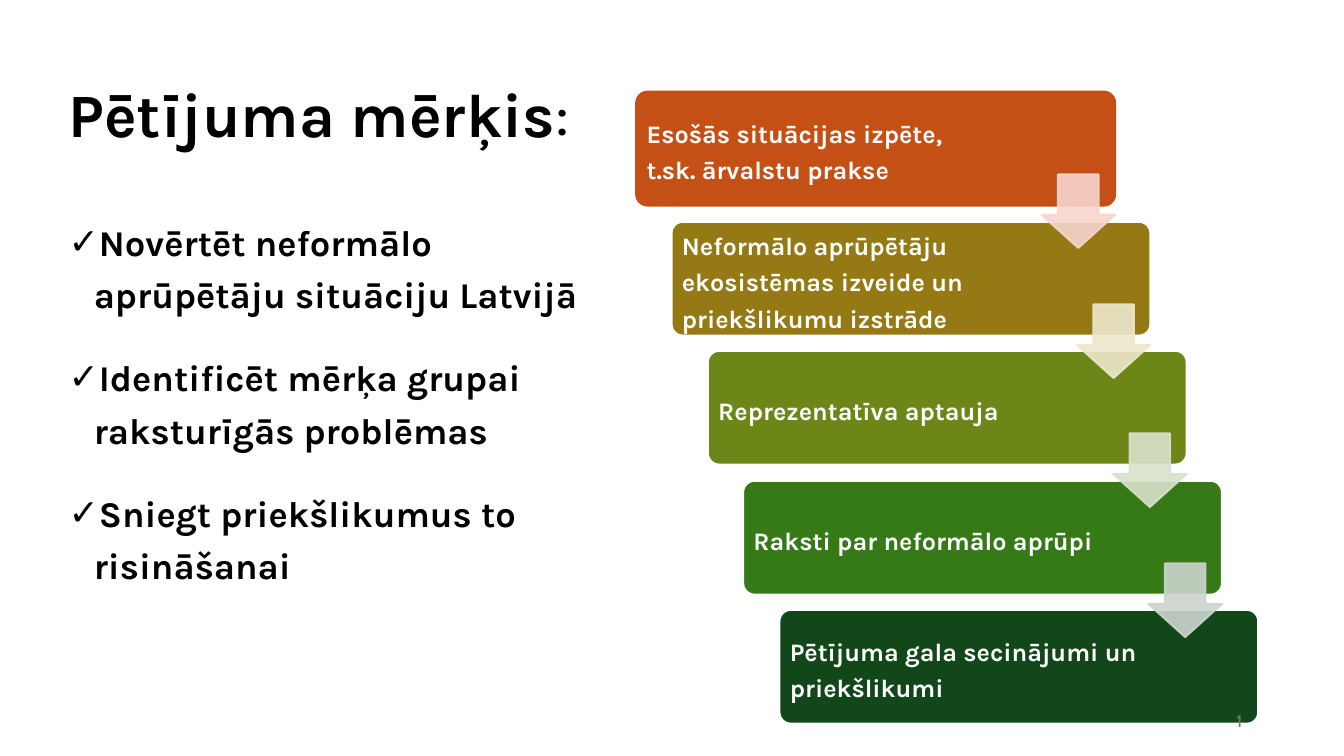
"""Build the slide on the study's goals and its five cascading steps."""
from dataclasses import dataclass

from lxml.etree import SubElement
from pptx import Presentation
from pptx.dml.color import RGBColor
from pptx.enum.shapes import MSO_SHAPE
from pptx.enum.text import MSO_ANCHOR, MSO_AUTO_SIZE, PP_ALIGN
from pptx.oxml.ns import qn
from pptx.util import Pt

EMU_PER_PX = 9144


def px(length):
    """Turn px, 100 to the inch, into EMU."""
    return length * EMU_PER_PX


@dataclass(frozen=True)
class Theme:
    """Fonts, colours and type sizes of the slide."""
    font: str = "Karla"
    number_font: str = "Cabin"
    ink: str = "000000"
    paper: str = "FFFFFF"
    muted: str = "797979"
    steps: tuple = ("C55015", "947914", "6C8717", "367A18", "114719")
    arrows: tuple = ("F7D5CE", "EEE7CB", "D8E2CA", "CCD4CD")
    title_size: float = 44
    goal_size: float = 25.9
    step_size: float = 18
    number_size: float = 12
    outline: float = 1.5


class SlideBuilder:
    """Draws each kind of element on the current slide in one theme."""

    def __init__(self, slide, theme):
        """Keep the slide and its theme."""
        self.slide = slide
        self.theme = theme

    def style(self, paragraph, size, color, bold=True, font=None):
        """Format every run of a paragraph."""
        for run in paragraph.runs:
            run.font.name = font or self.theme.font
            run.font.size = Pt(size)
            run.font.bold = bold
            run.font.color.rgb = RGBColor.from_string(color)

    def place(self, holder, left, top, width, height, anchor):
        """Move a placeholder and fix its text layout."""
        holder.left, holder.top = px(left), px(top)
        holder.width, holder.height = px(width), px(height)
        holder.text_frame.auto_size = MSO_AUTO_SIZE.NONE
        holder.text_frame.vertical_anchor = anchor

    def title(self, heading, ending, *box):
        """Fill the title, with a lighter ending."""
        title = self.slide.shapes.title
        self.place(title, *box, MSO_ANCHOR.MIDDLE)
        title.text_frame.text = heading
        paragraph = title.text_frame.paragraphs[0]
        paragraph.alignment = PP_ALIGN.LEFT
        paragraph.line_spacing = 0.9
        paragraph.add_run().text = ending
        self.style(paragraph, self.theme.title_size, self.theme.ink)
        paragraph.runs[-1].font.bold = False

    def checklist(self, goals, *box):
        """Fill the body with check-marked goals."""
        body = self.slide.placeholders[1]
        self.place(body, *box, MSO_ANCHOR.TOP)
        body.text_frame.text = "\n".join(goals)
        for paragraph in body.text_frame.paragraphs:
            paragraph.line_spacing = 1.2
            paragraph.space_before, paragraph.space_after = Pt(10), Pt(12)
            self.style(paragraph, self.theme.goal_size, self.theme.ink)
            properties = paragraph._p.get_or_add_pPr()
            properties.set("marL", str(px(25)))
            properties.set("indent", str(px(-25)))
            SubElement(properties, qn("a:buChar")).set("char", "✓")

    def shape(self, preset, fill, line, adjustments, *box):
        """Add a flat preset shape."""
        shape = self.slide.shapes.add_shape(preset, *map(px, box))
        shape.shadow.inherit = False
        shape.fill.solid()
        shape.fill.fore_color.rgb = RGBColor.from_string(fill)
        shape.line.color.rgb = RGBColor.from_string(line)
        shape.line.width = Pt(self.theme.outline)
        for index, value in enumerate(adjustments):
            shape.adjustments[index] = value
        return shape

    def step(self, label, fill, line, right_margin, *box):
        """Add one labelled step of the cascade."""
        step = self.shape(MSO_SHAPE.ROUNDED_RECTANGLE, fill, line, [0.1], *box)
        frame = step.text_frame
        frame.word_wrap = True
        frame.vertical_anchor = MSO_ANCHOR.MIDDLE
        frame.margin_left = frame.margin_top = frame.margin_bottom = px(7)
        frame.margin_right = px(right_margin)
        frame.text = label
        paragraph = frame.paragraphs[0]
        paragraph.alignment = PP_ALIGN.LEFT
        paragraph.line_spacing = 1.2
        paragraph.space_after = Pt(6)
        self.style(paragraph, self.theme.step_size, self.theme.paper)

    def arrow(self, color, *box):
        """Add a slightly see-through arrow to the next step."""
        arrow = self.shape(MSO_SHAPE.DOWN_ARROW, color, color, [0.55, 0.45], *box)
        for tint in arrow._element.spPr.iter(qn("a:srgbClr")):
            SubElement(tint, qn("a:alpha")).set("val", "90000")

    def slide_number(self, number, *box):
        """Add the slide number as a live field."""
        frame = self.slide.shapes.add_textbox(*map(px, box)).text_frame
        frame.word_wrap = True
        frame.vertical_anchor = MSO_ANCHOR.MIDDLE
        frame.text = number
        paragraph = frame.paragraphs[0]
        paragraph.alignment = PP_ALIGN.RIGHT
        self.style(paragraph, self.theme.number_size, self.theme.muted,
                   False, self.theme.number_font)
        field = paragraph.runs[0]._r
        field.tag = qn("a:fld")
        field.set("id", "{B6F15528-21DE-4FAA-801E-634DDDAF4B2B}")
        field.set("type", "slidenum")


GOALS = (
    "Novērtēt neformālo aprūpētāju situāciju Latvijā",
    "Identificēt mērķa grupai raksturīgās problēmas",
    "Sniegt priekšlikumus to risināšanai",
)
STEPS = (
    ("Esošās situācijas izpēte, t.sk. ārvalstu prakse", 136),
    ("Neformālo aprūpētāju ekosistēmas izveide un priekšlikumu izstrāde", 116),
    ("Reprezentatīva aptauja", 116),
    ("Raksti par neformālo aprūpi", 116),
    ("Pētījuma gala secinājumi un priekšlikumi", 116),
)


def main():
    """Compose and save the slide."""
    deck = Presentation()
    deck.slide_width, deck.slide_height = px(1333), px(750)
    theme = Theme()
    builder = SlideBuilder(deck.slides.add_slide(deck.slide_layouts[1]), theme)
    builder.title("Pētījuma mērķis", ":", 58, 44, 561, 145)
    builder.checklist(GOALS, 58, 205, 561, 436)

    corners = [(631 + 71 * i // 2, 91 + (257 * i + 1) // 2)
               for i in range(len(STEPS))]
    outlines = [theme.steps[0]] + [theme.paper] * (len(STEPS) - 1)
    for (label, margin), fill, line, corner in zip(
            STEPS, theme.steps, outlines, corners):
        builder.step(label, fill, line, margin, *corner, 475, 113)
    for color, (left, top) in zip(theme.arrows, corners):
        builder.arrow(color, left + 402, top + 82, 73, 73)

    builder.slide_number("2", 942, 695, 300, 40)
    deck.save("out.pptx")


if __name__ == "__main__":
    main()
